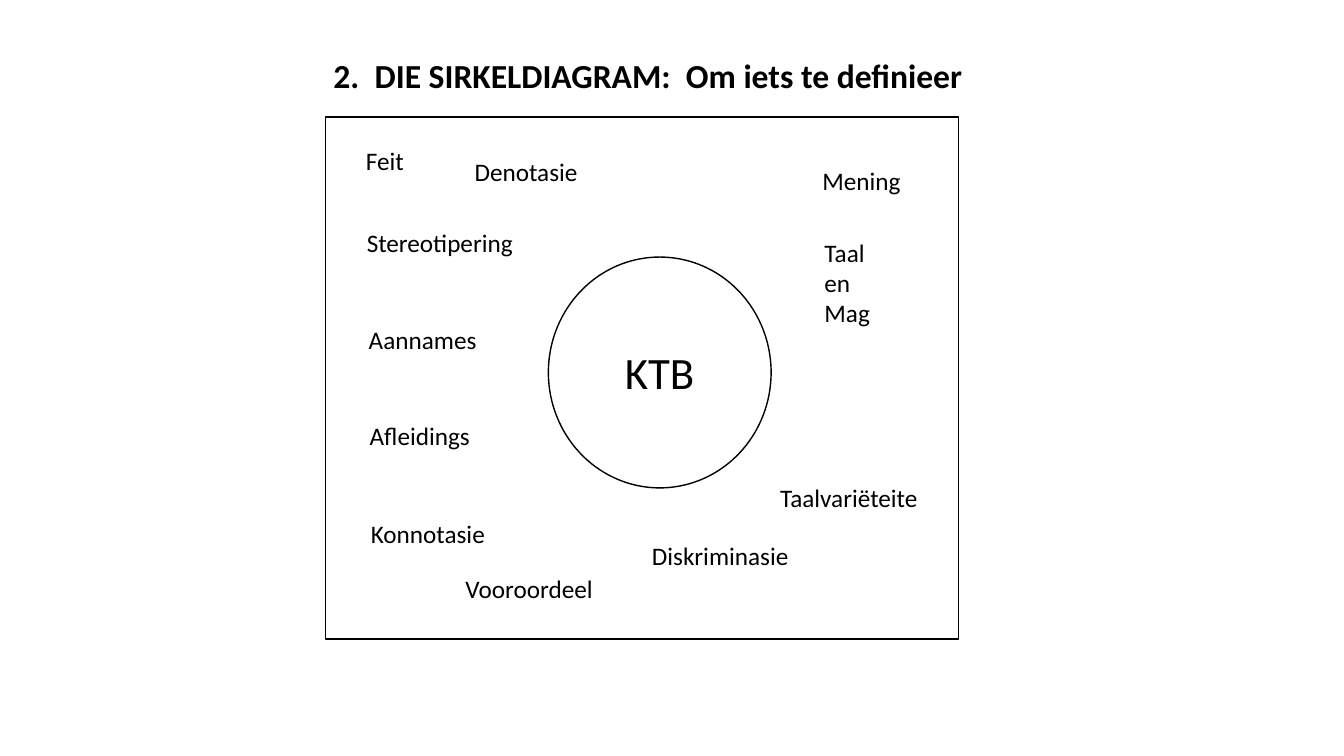
from pptx import Presentation
from pptx.dml.color import RGBColor
from pptx.enum import shapes, text
from pptx.util import Pt

theme = {
    "font": "Calibri",
    "ink": RGBColor(0, 0, 0),
    "paper": RGBColor(255, 255, 255),
    "title": 24,
    "centre": 32,
    "label": 18,
}

prs = Presentation()
prs.slide_width, prs.slide_height = Pt(960), Pt(540)
s = prs.slides.add_slide(prs.slide_layouts[6])


def add_text(words, left, top, width, height=28.8, size=theme["label"],
             bold=False, align=text.PP_ALIGN.LEFT):
    sp = s.shapes.add_textbox(Pt(left), Pt(top), Pt(width), Pt(height))
    tf = sp.text_frame
    tf.word_wrap = True
    tf.auto_size = text.MSO_AUTO_SIZE.SHAPE_TO_FIT_TEXT
    p = tf.paragraphs[0]
    p.alignment = align
    r = p.add_run()
    r.text = words
    r.font.name = theme["font"]
    r.font.size = Pt(size)
    r.font.bold = bold
    r.font.color.rgb = theme["ink"]


outlines = [
    (shapes.MSO_SHAPE.RECTANGLE, 232.6, 83.5, 452.2, 373),
    (shapes.MSO_SHAPE.OVAL, 391.7, 183.6, 159.1, 164.9),
]
for kind, left, top, width, height in outlines:
    sp = s.shapes.add_shape(kind, Pt(left), Pt(top), Pt(width), Pt(height))
    sp.shadow.inherit = False
    sp.fill.solid()
    sp.fill.fore_color.rgb = theme["paper"]
    sp.line.color.rgb = theme["ink"]
    sp.line.width = Pt(1)

add_text("2.  DIE SIRKELDIAGRAM:  Om iets te definieer", 231.1, 36, 620.6, 36,
         size=theme["title"], bold=True)
add_text("KTB", 411.8, 242.6, 118.8, 46.1, size=theme["centre"],
         align=text.PP_ALIGN.CENTER)

labels = [
    ("Feit", 254.2, 100.1, 54),
    ("Mening", 580.3, 114.5, 74.9),
    ("Denotasie", 331.9, 108, 90.7),
    ("Konnotasie", 257.8, 366.5, 97.9),
    ("Taal en Mag", 581.8, 165.6, 54, 72.7),
    ("Vooroordeel", 325.4, 406.1, 110.2),
    ("Diskriminasie", 458.6, 382.3, 123.1),
    ("Stereotipering", 254.9, 159.1, 126),
    ("Aannames", 256.3, 228.2, 92.2),
    ("Afleidings", 257, 296.6, 89.3),
    ("Taalvariëteite", 550.1, 341.3, 118.8),
]
for label in labels:
    add_text(*label)

prs.save("out.pptx")
